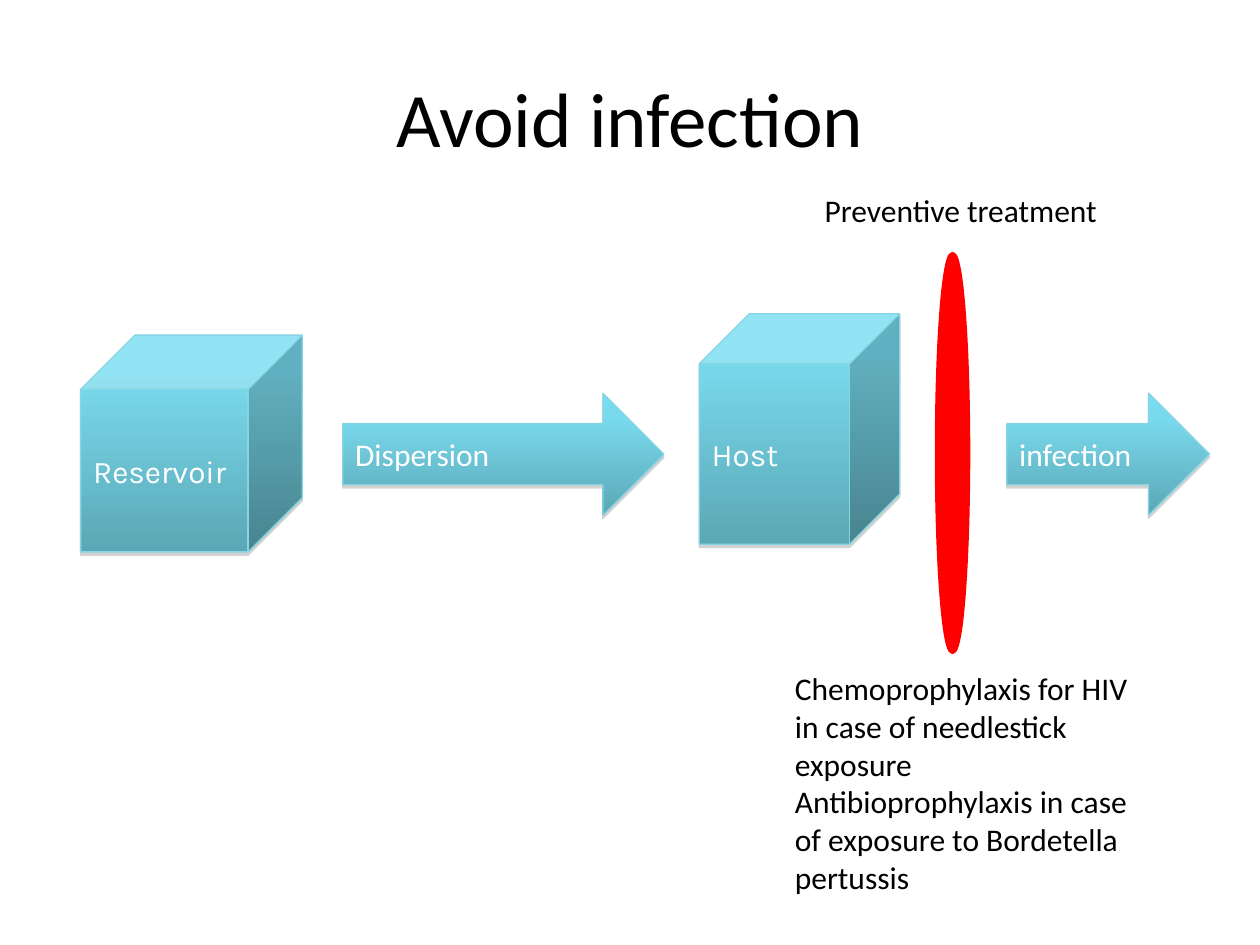
from dataclasses import dataclass

from lxml import etree
from pptx import Presentation
from pptx import util as u
from pptx.dml.color import RGBColor
from pptx.enum import shapes, text
from pptx.oxml import ns


@dataclass(frozen=True)
class Theme:
    black: str = "000000"
    white: str = "FFFFFF"
    barrier: str = "FF0000"
    outline: str = "86D5E4"
    shadow: str = "808080"
    gradient: tuple = ((0, "77DDF0"), (20, "79DAED"), (100, "5BA7B5"))
    font: str = "Calibri"
    box_font: str = "Karla"
    title_size: int = 44
    body_size: int = 18


@dataclass(frozen=True)
class Box:
    left: float
    top: float
    width: float
    height: float

    def lengths(self) -> tuple:
        return tuple(u.Inches(n) for n in (self.left, self.top, self.width, self.height))


@dataclass(frozen=True)
class Step:
    label: str
    kind: shapes.MSO_SHAPE
    box: Box
    font: str


THEME = Theme()
CUBE, ARROW = shapes.MSO_SHAPE.CUBE, shapes.MSO_SHAPE.RIGHT_ARROW
STEPS = (
    Step("Reservoir", CUBE, Box(0.64, 2.66, 1.76, 1.72), THEME.box_font),
    Step("Host", CUBE, Box(5.55, 2.49, 1.59, 1.83), THEME.box_font),
    Step("Dispersion", ARROW, Box(2.72, 3.12, 2.55, 0.97), THEME.font),
    Step("infection", ARROW, Box(7.99, 3.12, 1.61, 0.97), THEME.font),
)


def write_text(frame, *lines: str, font=THEME.font, size=THEME.body_size,
               color=THEME.black, align=text.PP_ALIGN.LEFT,
               anchor=text.MSO_ANCHOR.TOP) -> None:
    frame.word_wrap = True
    frame.vertical_anchor = anchor
    for index, line in enumerate(lines):
        paragraph = frame.add_paragraph() if index else frame.paragraphs[0]
        paragraph.alignment = align
        run = paragraph.add_run()
        run.text = line
        run.font.name = font
        run.font.size = u.Pt(size)
        run.font.color.rgb = RGBColor.from_string(color)


def add_element(parent, tag: str, **attributes):
    values = {name: str(value) for name, value in attributes.items()}
    return etree.SubElement(parent, ns.qn(tag), values)


def add_shape(slide, kind, box: Box, line_color: str, line_width: float):
    shape = slide.shapes.add_shape(kind, *box.lengths())
    shape.shadow.inherit = False
    shape.line.color.rgb = RGBColor.from_string(line_color)
    shape.line.width = u.Pt(line_width)
    return shape


def add_step(slide, step: Step) -> None:
    shape = add_shape(slide, step.kind, step.box, THEME.outline, 0.75)

    # Three-stop gradient running from top to bottom
    shape.fill.gradient()
    shape.fill.gradient_angle = 270
    properties = shape._element.spPr
    stops = properties.find(".//" + ns.qn("a:gsLst"))
    stops.clear()
    for position, color in THEME.gradient:
        stop = add_element(stops, "a:gs", pos=position * 1000)
        add_element(stop, "a:srgbClr", val=color)

    # Hard shadow just below the shape
    shadow = add_element(properties.find(ns.qn("a:effectLst")), "a:outerShdw",
                         blurRad=0, dist=int(u.Pt(1.8)), dir=90 * 60000, rotWithShape=0)
    shadow_color = add_element(shadow, "a:srgbClr", val=THEME.shadow)
    add_element(shadow_color, "a:alpha", val=35000)

    write_text(shape.text_frame, step.label, font=step.font, color=THEME.white,
               anchor=text.MSO_ANCHOR.MIDDLE)


def add_caption(slide, box: Box, *lines: str, align=text.PP_ALIGN.LEFT) -> None:
    caption = slide.shapes.add_textbox(*box.lengths())
    write_text(caption.text_frame, *lines, align=align)
    caption.text_frame.auto_size = text.MSO_AUTO_SIZE.SHAPE_TO_FIT_TEXT


def main() -> None:
    presentation = Presentation()
    presentation.slide_width, presentation.slide_height = u.Inches(10), u.Inches(7.5)
    slide = presentation.slides.add_slide(presentation.slide_layouts[5])

    # Title
    title = slide.shapes.title
    title.left, title.top, title.width, title.height = Box(0.5, 0.3, 9, 1.25).lengths()
    write_text(title.text_frame, "Avoid infection", size=THEME.title_size,
               align=text.PP_ALIGN.CENTER, anchor=text.MSO_ANCHOR.MIDDLE)

    # Examples of treatment
    add_caption(slide, Box(6.21, 5.26, 2.89, 1.92),
                "Chemoprophylaxis for HIV in case of needlestick exposure",
                "Antibioprophylaxis in case of exposure to Bordetella pertussis")

    # Chain of infection
    for step in STEPS:
        add_step(slide, step)

    # Barrier between host and infection, with its heading
    barrier = add_shape(slide, shapes.MSO_SHAPE.OVAL, Box(7.44, 2.02, 0.24, 3.15),
                        THEME.barrier, 3)
    barrier.fill.solid()
    barrier.fill.fore_color.rgb = RGBColor.from_string(THEME.barrier)
    add_caption(slide, Box(6.18, 1.47, 2.89, 0.4), "Preventive treatment",
                align=text.PP_ALIGN.CENTER)

    presentation.save("out.pptx")


if __name__ == "__main__":
    main()
